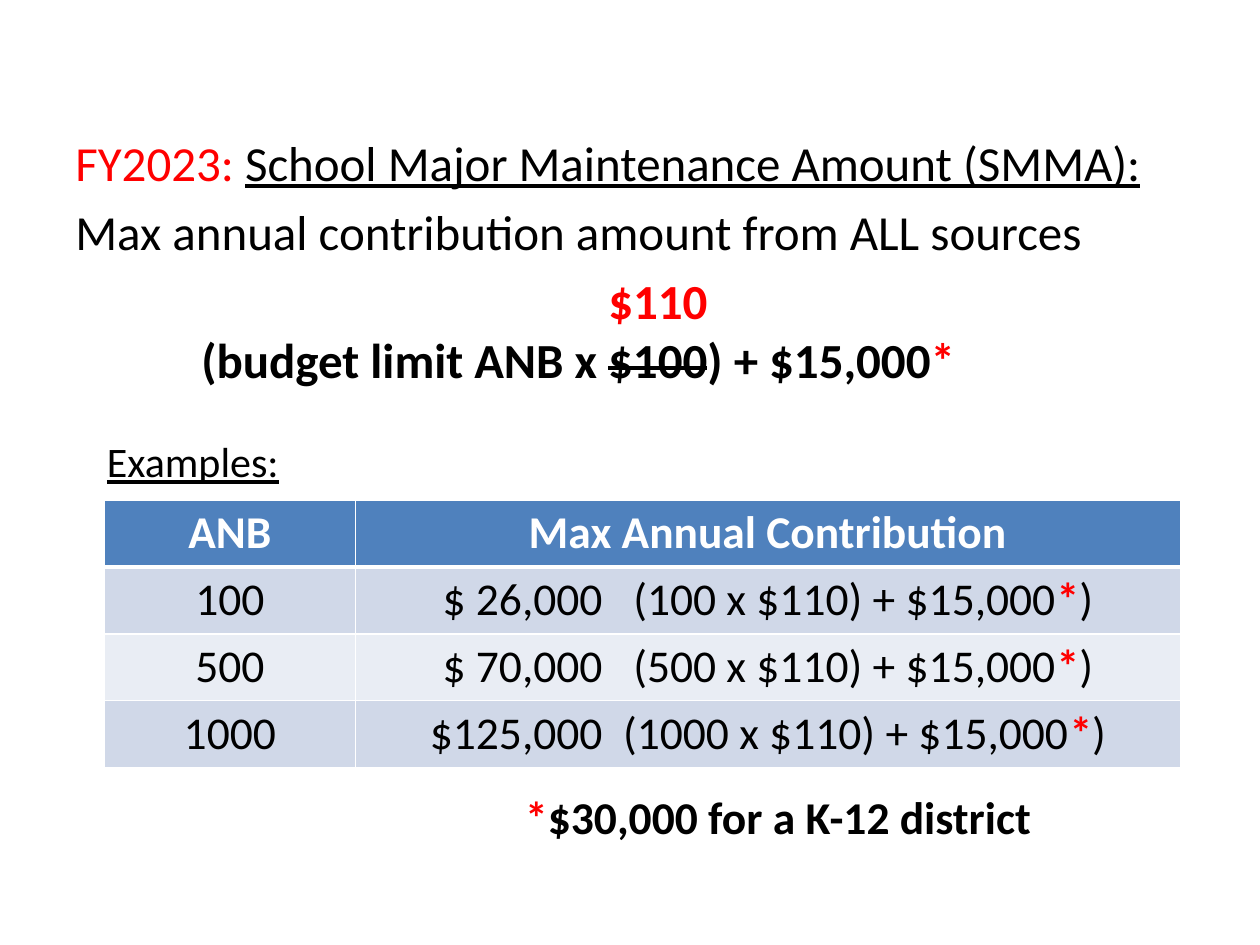
from lxml import etree
from pptx import Presentation
from pptx.dml.color import RGBColor
from pptx.enum.text import MSO_ANCHOR, PP_ALIGN
from pptx.oxml.ns import qn
from pptx.util import Inches, Pt

CENTER = PP_ALIGN.CENTER
TOP = MSO_ANCHOR.TOP
FONT = "Calibri"
COLORS = {
    "text": "000000",
    "accent": "FF0000",
    "header": "4F81BD",
    "odd_row": "D0D8E8",
    "even_row": "E9EDF4",
    "white": "FFFFFF",
}


def add_run(paragraph, text, size, color="text", bold=False, underline=False, strike=False):
    run = paragraph.add_run()
    run.text = text
    run.font.name = FONT
    run.font.size = Pt(size)
    run.font.bold = bold
    run.font.underline = underline
    run.font.color.rgb = RGBColor.from_string(COLORS[color])
    if strike:
        run._r.get_or_add_rPr().set("strike", "sngStrike")


def add_text_frame(slide, box, wrap=True):
    frame = slide.shapes.add_textbox(*map(Inches, box)).text_frame
    frame.word_wrap = wrap
    return frame


def add_formula(slide, box):
    size = 28
    lines = [
        (0, 0, [("FY2023: ", {"color": "accent"}),
                ("School Major Maintenance Amount (SMMA):", {"underline": True})]),
        (0, 6, [("Max annual contribution amount from ALL sources", {})]),
        (4.23, 0, [("$110", {"color": "accent", "bold": True})]),
        (1, 0, [("(budget limit ANB x ", {"bold": True}),
                ("$100", {"bold": True, "strike": True}),
                (") + $15,000", {"bold": True}),
                ("*", {"color": "accent", "bold": True})]),
    ]
    frame = add_text_frame(slide, box)
    for index, (indent, spacing, runs) in enumerate(lines):
        line = frame.add_paragraph() if index else frame.paragraphs[0]
        line.space_before = line.space_after = Pt(spacing)
        line._p.get_or_add_pPr().set("marL", str(Inches(indent)))
        for text, style in runs:
            add_run(line, text, size, **style)


def add_examples_label(slide, box):
    label = add_text_frame(slide, box, wrap=False).paragraphs[0]
    add_run(label, "Examples:", 24, underline=True)


def set_borders(cell, top, bottom):
    properties = cell._tc.get_or_add_tcPr()
    widths = {"a:lnL": 1, "a:lnR": 1, "a:lnT": top, "a:lnB": bottom}
    for position, (side, width) in enumerate(widths.items()):
        line = etree.Element(qn(side), w=str(Pt(width)))
        fill = etree.SubElement(line, qn("a:solidFill"))
        etree.SubElement(fill, qn("a:srgbClr"), val=COLORS["white"])
        properties.insert(position, line)


def add_contributions(slide, box):
    size = 26
    header = ("ANB", "Max Annual Contribution")
    examples = [
        ("100", "$ 26,000   (100 x $110) + $15,000"),
        ("500", "$ 70,000   (500 x $110) + $15,000"),
        ("1000", "$125,000  (1000 x $110) + $15,000"),
    ]
    rows = [header, *examples]
    table = slide.shapes.add_table(len(rows), len(header), *map(Inches, box)).table
    for column, width in zip(table.columns, (1.99, 6.55)):
        column.width = Inches(width)
    for row_index, row in enumerate(rows):
        is_header = row_index == 0
        band = "header" if is_header else "odd_row" if row_index % 2 else "even_row"
        for column_index, text in enumerate(row):
            cell = table.cell(row_index, column_index)
            cell.margin_left = cell.margin_right = Inches(0.07)
            cell.margin_top = cell.margin_bottom = Inches(0.04)
            cell.vertical_anchor = TOP
            cell.fill.solid()
            cell.fill.fore_color.rgb = RGBColor.from_string(COLORS[band])
            set_borders(cell, 3 if row_index == 1 else 1, 3 if is_header else 1)
            entry = cell.text_frame.paragraphs[0]
            entry.alignment = CENTER
            add_run(entry, text, size, "white" if is_header else "text", bold=is_header)
            if column_index and not is_header:
                add_run(entry, "*", size, "accent", bold=True)
                add_run(entry, ")", size)


def add_footnote(slide, box):
    note = add_text_frame(slide, box).paragraphs[0]
    add_run(note, "*", 26, "accent", bold=True)
    add_run(note, "$30,000 for a K-12 district", 26, bold=True)


def main():
    presentation = Presentation()
    presentation.slide_width = Inches(10)
    presentation.slide_height = Inches(7.5)
    slide = presentation.slides.add_slide(presentation.slide_layouts[6])
    add_formula(slide, (0.5, 1, 8.88, 6.17))
    add_examples_label(slide, (0.75, 3.41, 1.58, 0.5))
    add_contributions(slide, (0.83, 3.97, 8.54, 2.12))
    add_footnote(slide, (4.07, 6.21, 4.26, 0.54))
    presentation.save("out.pptx")


if __name__ == "__main__":
    main()
